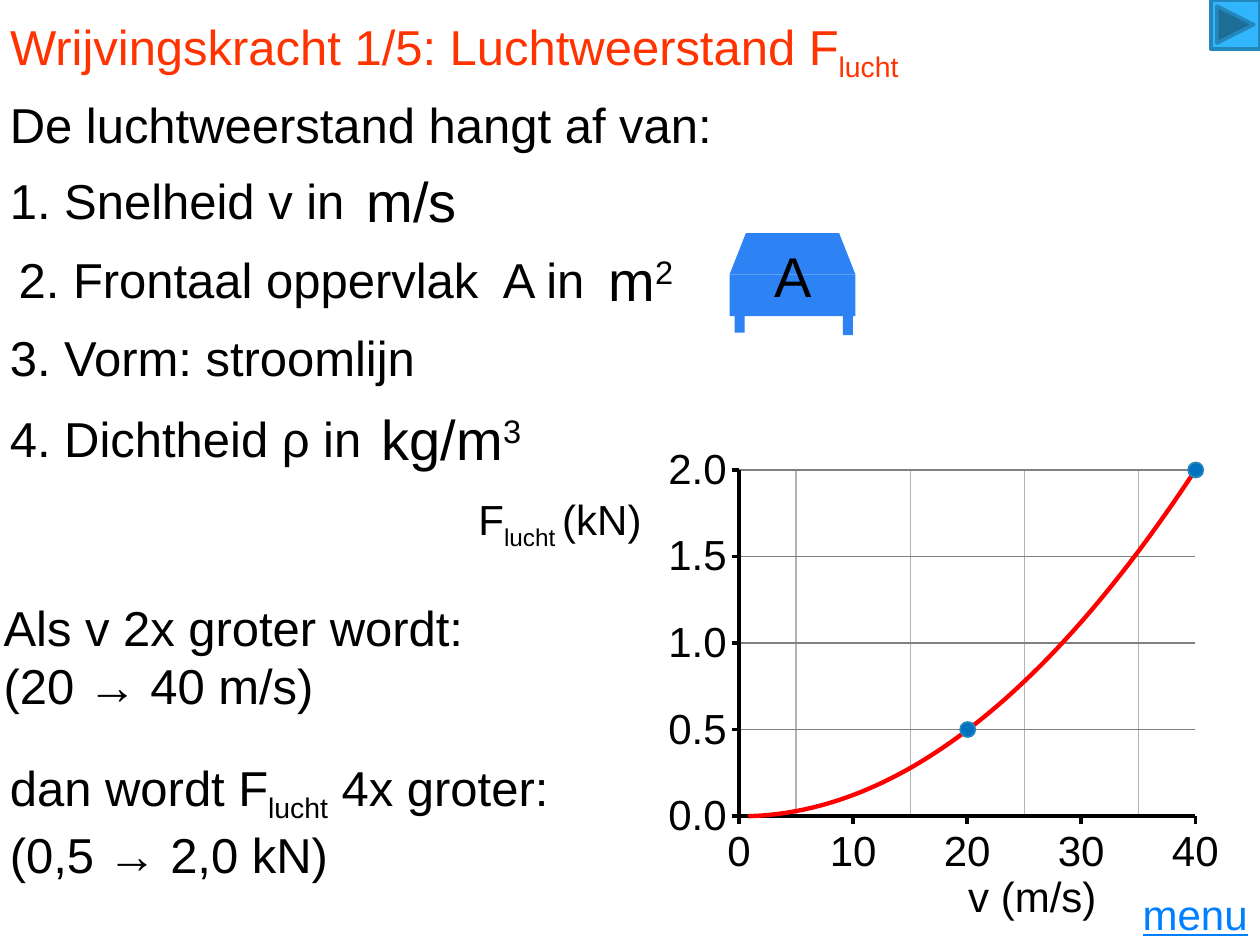
from lxml import etree
from pptx import Presentation
from pptx.chart.data import XyChartData
from pptx.dml.color import RGBColor
from pptx.enum.chart import XL_CHART_TYPE as ChartType, XL_MARKER_STYLE as Marker, XL_TICK_MARK as Tick
from pptx.enum.shapes import MSO_SHAPE as Shape
from pptx.enum.text import MSO_ANCHOR as Anchor, MSO_AUTO_SIZE as AutoSize, PP_ALIGN as Align
from pptx.oxml import parse_xml
from pptx.oxml.ns import nsdecls, qn
from pptx.util import Inches, Pt

FONT = "Arial"
COLORS = {"title": "FF3300", "text": "000000", "link": "0080FF", "car": "2D82F4",
          "point": "0070C0", "button": "31B6FD", "edge": "2487BB", "curve": "FF0000",
          "grid": "808080", "light_grid": "B3B3B3"}
SUB, SUPER = -25000, 30000
LEFT = -0.02
PLOT = {"x": 0.185, "y": 0.058, "w": 0.756, "h": 0.757}
CHART = (4.98, 3.52, 4.79, 3.63)
SPEED_MAX, FORCE_MAX = 40, 2
MEASURED = [(0, 0), (10, 0.12), (20, 0.5), (30, 1.12), (40, 2)]


def rgb(key):
    return RGBColor.from_string(COLORS[key])


def place(shape, box):
    shape.left, shape.top, shape.width, shape.height = map(Inches, box)


def write(shape, lines, size=28, color="text", align=Align.LEFT, anchor=Anchor.TOP, wrap=True):
    """Fill a shape with lines; each line is a list of (text, baseline shift) runs."""
    frame = shape.text_frame
    frame.word_wrap = wrap
    frame.auto_size = AutoSize.NONE
    frame.vertical_anchor = anchor
    for index, runs in enumerate(lines):
        paragraph = frame.add_paragraph() if index else frame.paragraphs[0]
        paragraph.alignment = align
        for text, shift in runs:
            run = paragraph.add_run()
            run.text = text
            run.font.name, run.font.size = FONT, Pt(size)
            run.font.color.rgb = rgb(color)
            if shift:
                run.font._element.set("baseline", str(shift))
    return frame


def add_text(slide, box, *lines, **style):
    return write(slide.shapes.add_textbox(*map(Inches, box)), lines, **style)


def paint(shape, fill, edge=None, width=1):
    shape.shadow.inherit = False
    shape.fill.solid()
    shape.fill.fore_color.rgb = rgb(fill)
    if edge:
        shape.line.color.rgb = rgb(edge)
        shape.line.width = Pt(width)
    else:
        shape.line.fill.background()


def add_preset(slide, kind, box, *style):
    paint(slide.shapes.add_shape(kind, *map(Inches, box)), *style)


def add_car(slide):
    left, top, width, half = 5.79, 1.85, 1, 0.33
    body_top = top + half
    for wheel_left, wheel_top in ((5.83, 2.31), (6.69, 2.33)):
        add_preset(slide, Shape.RECTANGLE, (wheel_left, wheel_top, 0.08, half), "car")
    add_preset(slide, Shape.RECTANGLE, (left, body_top, width, half), "car")
    roof = slide.shapes.build_freeform(Inches(left), Inches(body_top))
    corners = [(left + 0.13, top), (left + width - 0.13, top), (left + width, body_top)]
    roof.add_line_segments([(Inches(x), Inches(y)) for x, y in corners], close=True)
    paint(roof.convert_to_shape(), "car")
    add_text(slide, (6.05, 1.87, 0.67, 0.64), [("A", 0)], size=32)


def style_axis(axis, maximum, step, number_format):
    axis.minimum_scale, axis.maximum_scale, axis.major_unit = 0, maximum, step
    axis.major_tick_mark, axis.minor_tick_mark = Tick.OUTSIDE, Tick.NONE
    axis.format.line.color.rgb = rgb("text")
    axis.format.line.width = Pt(2)
    labels = axis.tick_labels
    labels.font.name, labels.font.size = FONT, Pt(24)
    labels.font.color.rgb = rgb("text")
    labels.number_format, labels.number_format_is_linked = number_format, False


def line_properties(color, width):
    """Chart line formatting as an element, for parts without a public format."""
    return parse_xml(
        f'<c:spPr {nsdecls("c", "a")}><a:ln w="{Pt(width)}"><a:solidFill>'
        f'<a:srgbClr val="{COLORS[color]}"/></a:solidFill></a:ln></c:spPr>')


def add_grids(speed_axis, force_axis):
    speed_axis.has_major_gridlines = False
    speed_axis.has_minor_gridlines = True
    speed_axis.minor_unit = 5
    minor_grid = speed_axis._element.find(qn("c:minorGridlines"))
    minor_grid.append(line_properties("light_grid", 0.75))
    force_axis.has_major_gridlines = True
    force_line = force_axis.major_gridlines.format.line
    force_line.color.rgb = rgb("grid")
    force_line.width = Pt(0.75)


def add_trend(series):
    trend = parse_xml(
        f'<c:trendline {nsdecls("c")}><c:trendlineType val="poly"/><c:order val="2"/>'
        '<c:dispRSqr val="0"/><c:dispEq val="0"/></c:trendline>')
    trend.insert(0, line_properties("curve", 2.5))
    series._element.find(qn("c:xVal")).addprevious(trend)


def fix_plot_area(chart):
    plot_area = chart._chartSpace.chart.plotArea
    for old in plot_area.findall(qn("c:layout")):
        plot_area.remove(old)
    layout = etree.Element(qn("c:layout"))
    manual = etree.SubElement(layout, qn("c:manualLayout"))
    settings = {"layoutTarget": "inner", "xMode": "edge", "yMode": "edge", **PLOT}
    for tag, value in settings.items():
        etree.SubElement(manual, qn(f"c:{tag}")).set("val", str(value))
    plot_area.insert(0, layout)


def add_force_chart(slide):
    data = XyChartData()
    measurements = data.add_series("Series 1")
    for speed, force in MEASURED:
        measurements.add_data_point(speed, force)
    chart = slide.shapes.add_chart(ChartType.XY_SCATTER, *map(Inches, CHART), data).chart
    chart.has_legend = chart.has_title = False
    chart.font.name, chart.font.size = FONT, Pt(18)
    chart.font.color.rgb = rgb("text")
    chart.plots[0].vary_by_categories = False
    style_axis(chart.category_axis, SPEED_MAX, 10, "General")
    style_axis(chart.value_axis, FORCE_MAX, 0.5, "#,##0.0")
    add_grids(chart.category_axis, chart.value_axis)
    series = chart.plots[0].series[0]
    series.smooth = False
    series.format.line.fill.background()
    series.marker.style = Marker.NONE
    add_trend(series)
    fix_plot_area(chart)


def add_point(slide, speed, force, size=0.12):
    """Mark a point of the curve, placed by the chart's own scale."""
    left, top, width, height = CHART
    x = left + width * (PLOT["x"] + PLOT["w"] * speed / SPEED_MAX)
    y = top + height * (PLOT["y"] + PLOT["h"] * (1 - force / FORCE_MAX))
    box = (round(x - size / 2, 2), round(y - size / 2, 2), size, size)
    add_preset(slide, Shape.OVAL, box, "point", "edge")


def main():
    deck = Presentation()
    deck.slide_width, deck.slide_height = Inches(10), Inches(7.5)
    slide = deck.slides.add_slide(deck.slide_layouts[5])

    add_force_chart(slide)
    add_text(slide, (3.24, 3.87, 1.95, 0.5), [("F", 0), ("lucht ", SUB), ("(kN)", 0)],
             size=24, align=Align.RIGHT)
    add_text(slide, (6.85, 6.86, 1.95, 0.5), [("v (m/s)", 0)], size=24, align=Align.RIGHT)

    title = slide.shapes.title
    place(title, (LEFT, 0.08, 10, 0.58))
    write(title, [[("Wrijvingskracht 1/5: Luchtweerstand F", 0), ("lucht", SUB)]], color="title")

    factors = [(LEFT, 0.7, 10, "De luchtweerstand hangt af van:"),
               (LEFT, 1.3, 4, "1. Snelheid v in"),
               (0.05, 1.93, 6.67, "2. Frontaal oppervlak  A in"),
               (LEFT, 2.55, 7.83, "3. Vorm: stroomlijn"),
               (LEFT, 3.19, 4.49, "4. Dichtheid ρ in")]
    for left, top, width, text in factors:
        add_text(slide, (left, top, width, 0.58), [(text, 0)])

    add_text(slide, (2.81, 1.3, 1.17, 0.58), [("m/s", 0)], size=32, anchor=Anchor.MIDDLE)
    add_text(slide, (4.73, 1.9, 0.82, 0.64), [("m", 0), ("2", SUPER)], size=32)
    add_text(slide, (2.93, 3.16, 1.8, 0.64), [("kg/m", 0), ("3", SUPER)], size=32)
    add_car(slide)

    add_text(slide, (-0.07, 4.69, 5.62, 1.04),
             [("Als v 2x groter wordt:", 0)], [("(20 → 40 m/s)", 0)])
    add_text(slide, (LEFT, 5.96, 5.62, 1.04),
             [("dan wordt F", 0), ("lucht", SUB), (" 4x groter:", 0)], [("(0,5 → 2,0 kN)", 0)])

    menu = add_text(slide, (8.95, 7, 1.05, 0.5), [("menu", 0)],
                    size=24, color="link", align=Align.RIGHT, wrap=False)
    menu.paragraphs[0].runs[0].font.underline = True

    for speed, force in (MEASURED[2], MEASURED[4]):
        add_point(slide, speed, force)
    add_preset(slide, Shape.ACTION_BUTTON_FORWARD_OR_NEXT, (9.61, 0, 0.39, 0.39),
               "button", "edge", 2)
    deck.save("out.pptx")


if __name__ == "__main__":
    main()
